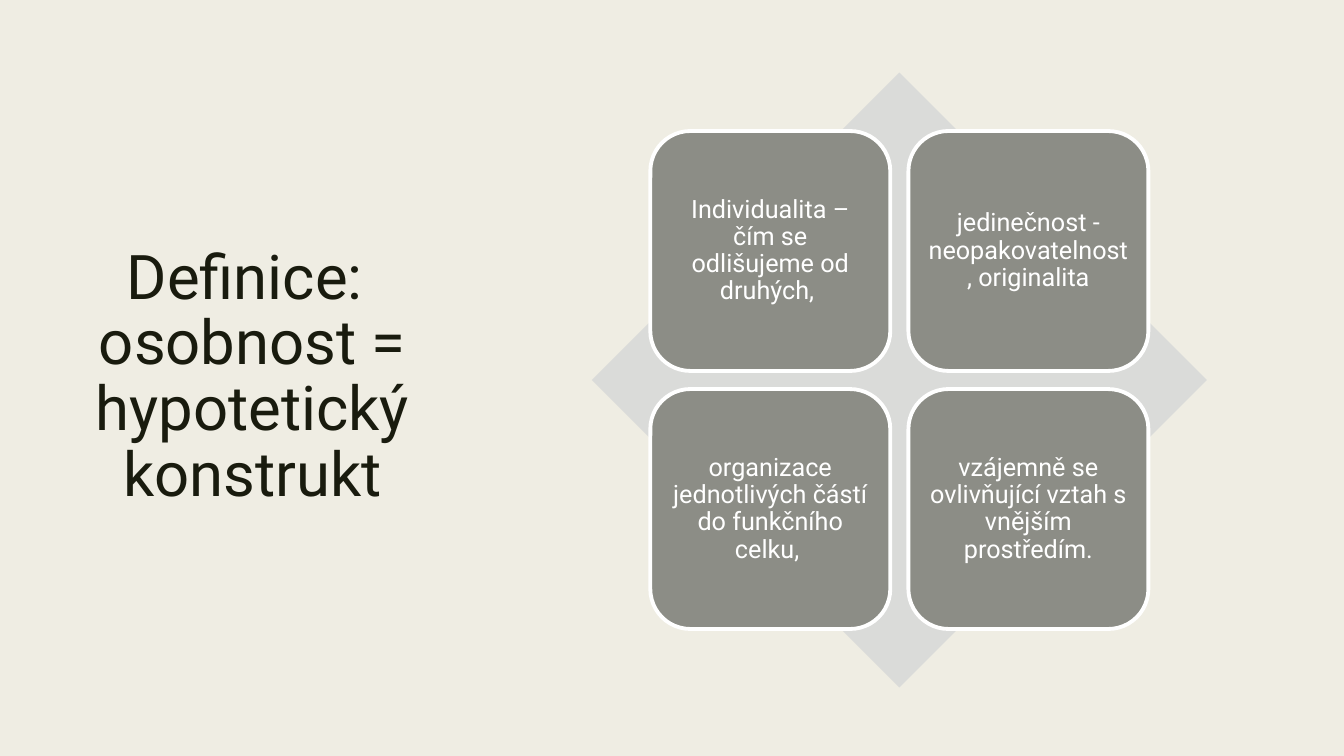
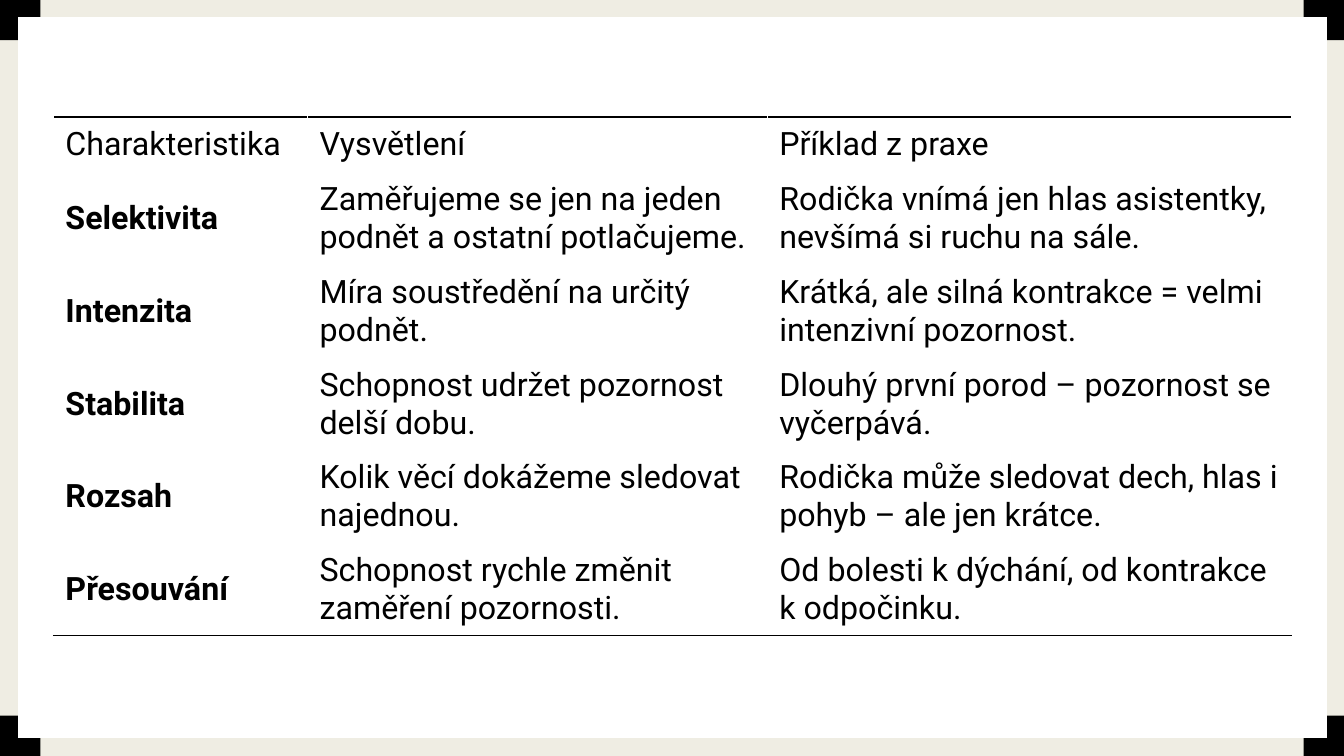
"""Build two slides on personality and the characteristics of attention."""
import itertools

import lxml.etree
import pptx
import pptx.dml.color
import pptx.enum.shapes
import pptx.enum.text
import pptx.oxml.ns
import pptx.util

Inches = pptx.util.Inches
Pt = pptx.util.Pt
SHAPES = pptx.enum.shapes.MSO_SHAPE
CENTER = pptx.enum.text.PP_ALIGN.CENTER
LEFT = pptx.enum.text.PP_ALIGN.LEFT
MIDDLE = pptx.enum.text.MSO_ANCHOR.MIDDLE

WIDTH, HEIGHT = 13.33, 7.5
FONT = "Roboto"
SAND, INK, SILVER, STONE = "EFEDE3", "191B0E", "DADBD9", "8C8D86"
WHITE, BLACK = "FFFFFF", "000000"

TRAITS = [
    "Individualita – čím se odlišujeme od druhých, ",
    "jedinečnost - neopakovatelnost, originalita",
    "organizace jednotlivých částí do funkčního celku, ",
    "vzájemně se ovlivňující vztah s vnějším prostředím.",
]
ATTENTION = [
    ("Charakteristika", "Vysvětlení", "Příklad z praxe"),
    ("Selektivita", "Zaměřujeme se jen na jeden podnět a ostatní potlačujeme.",
     "Rodička vnímá jen hlas asistentky, nevšímá si ruchu na sále."),
    ("Intenzita", "Míra soustředění na určitý podnět.",
     "Krátká, ale silná kontrakce = velmi intenzivní pozornost."),
    ("Stabilita", "Schopnost udržet pozornost delší dobu.",
     "Dlouhý první porod – pozornost se vyčerpává."),
    ("Rozsah", "Kolik věcí dokážeme sledovat najednou.",
     "Rodička může sledovat dech, hlas i pohyb – ale jen krátce."),
    ("Přesouvání", "Schopnost rychle změnit zaměření pozornosti.",
     "Od bolesti k dýchání, od kontrakce k odpočinku."),
]


def colour(code):
    return pptx.dml.color.RGBColor.from_string(code)


def apply(target, **values):
    for name, value in values.items():
        setattr(target, name, value)


class Slides:
    def __init__(self):
        self.deck = pptx.Presentation()
        apply(self.deck, slide_width=Inches(WIDTH), slide_height=Inches(HEIGHT))
        self.page = None

    def add_page(self, layout):
        self.page = self.deck.slides.add_slide(self.deck.slide_layouts[layout])
        fill = self.page.background.fill
        fill.solid()
        fill.fore_color.rgb = colour(SAND)

    def set_text(self, frame, text, size, ink, align=CENTER, spacing=1.0, bold=False):
        frame.text = text
        for para in frame.paragraphs:
            apply(para, alignment=align, line_spacing=spacing)
            for span in para.runs:
                apply(span.font, name=FONT, size=Pt(size), bold=bold)
                span.font.color.rgb = colour(ink)

    def title(self, text, left, top, width, height):
        box = self.page.shapes.title
        apply(box, left=Inches(left), top=Inches(top),
              width=Inches(width), height=Inches(height))
        apply(box.text_frame, word_wrap=True, vertical_anchor=MIDDLE,
              auto_size=pptx.enum.text.MSO_AUTO_SIZE.NONE)
        self.set_text(box.text_frame, text, 44, INK, spacing=0.89)

    def shape(self, kind, left, top, width, height, fill):
        box = self.page.shapes.add_shape(
            kind, Inches(left), Inches(top), Inches(width), Inches(height))
        box.shadow.inherit = False
        box.fill.solid()
        box.fill.fore_color.rgb = colour(fill)
        box.line.fill.background()
        return box

    def tile(self, text, left, top, size):
        box = self.shape(SHAPES.ROUNDED_RECTANGLE, left, top, size, size, STONE)
        box.line.color.rgb = colour(WHITE)
        box.line.width = Pt(2.75)
        sides = ("left", "top", "right", "bottom")
        apply(box.text_frame, word_wrap=True, vertical_anchor=MIDDLE,
              **{f"margin_{side}": Inches(0.07) for side in sides})
        self.set_text(box.text_frame, text, 18, WHITE, spacing=0.9)

    def border(self, cell, tag):
        qn = pptx.oxml.ns.qn
        line = lxml.etree.Element(qn(tag), w=str(Pt(1)))
        fill = lxml.etree.SubElement(line, qn("a:solidFill"))
        lxml.etree.SubElement(fill, qn("a:srgbClr"), val=BLACK)
        cell._tc.get_or_add_tcPr().insert(0, line)

    def table(self, rows, left, top, widths, heights):
        frame = self.page.shapes.add_table(
            len(rows), len(widths), Inches(left), Inches(top),
            Inches(sum(widths)), Inches(sum(heights)))
        table = frame.table
        apply(table, first_row=False, horz_banding=False)
        for column, width in zip(table.columns, widths):
            column.width = Inches(width)
        for row, height in zip(table.rows, heights):
            row.height = Inches(height)
        last = len(rows) - 1
        for i, j in itertools.product(range(len(rows)), range(len(widths))):
            cell = table.cell(i, j)
            apply(cell, vertical_anchor=MIDDLE,
                  margin_left=Inches(0.12), margin_right=Inches(0.12),
                  margin_top=Inches(0.06), margin_bottom=Inches(0.06))
            cell.fill.background()
            self.set_text(cell.text_frame, rows[i][j], 23, BLACK, LEFT,
                          bold=i > 0 and j == 0)
            if i == 0:
                self.border(cell, "a:lnT")
            if i == last:
                self.border(cell, "a:lnB")


def definition(slides):
    slides.add_page(5)
    slides.title("Definice: \vosobnost = hypotetický konstrukt", 0.7, 0.7, 3.61, 6.1)
    slides.shape(SHAPES.DIAMOND, 5.87, 0.72, 6.1, 6.1, SILVER)
    left, top, size, step = 6.45, 1.3, 2.38, 2.56
    for index, text in enumerate(TRAITS):
        row, column = divmod(index, 2)
        slides.tile(text, left + column * step, top + row * step, size)


def attention(slides):
    slides.add_page(6)
    corner = 0.4
    for left, top in itertools.product((0, WIDTH - corner), (0, HEIGHT - corner)):
        slides.shape(SHAPES.RECTANGLE, left, top, corner, corner, BLACK)
    slides.shape(SHAPES.RECTANGLE, 0.18, 0.17, 12.98, 7.15, WHITE)
    slides.table(ATTENTION, 0.53, 1.16, [2.52, 4.56, 5.2], [0.55] + [0.92] * 5)


def main():
    slides = Slides()
    definition(slides)
    attention(slides)
    slides.deck.save("out.pptx")


if __name__ == "__main__":
    main()
